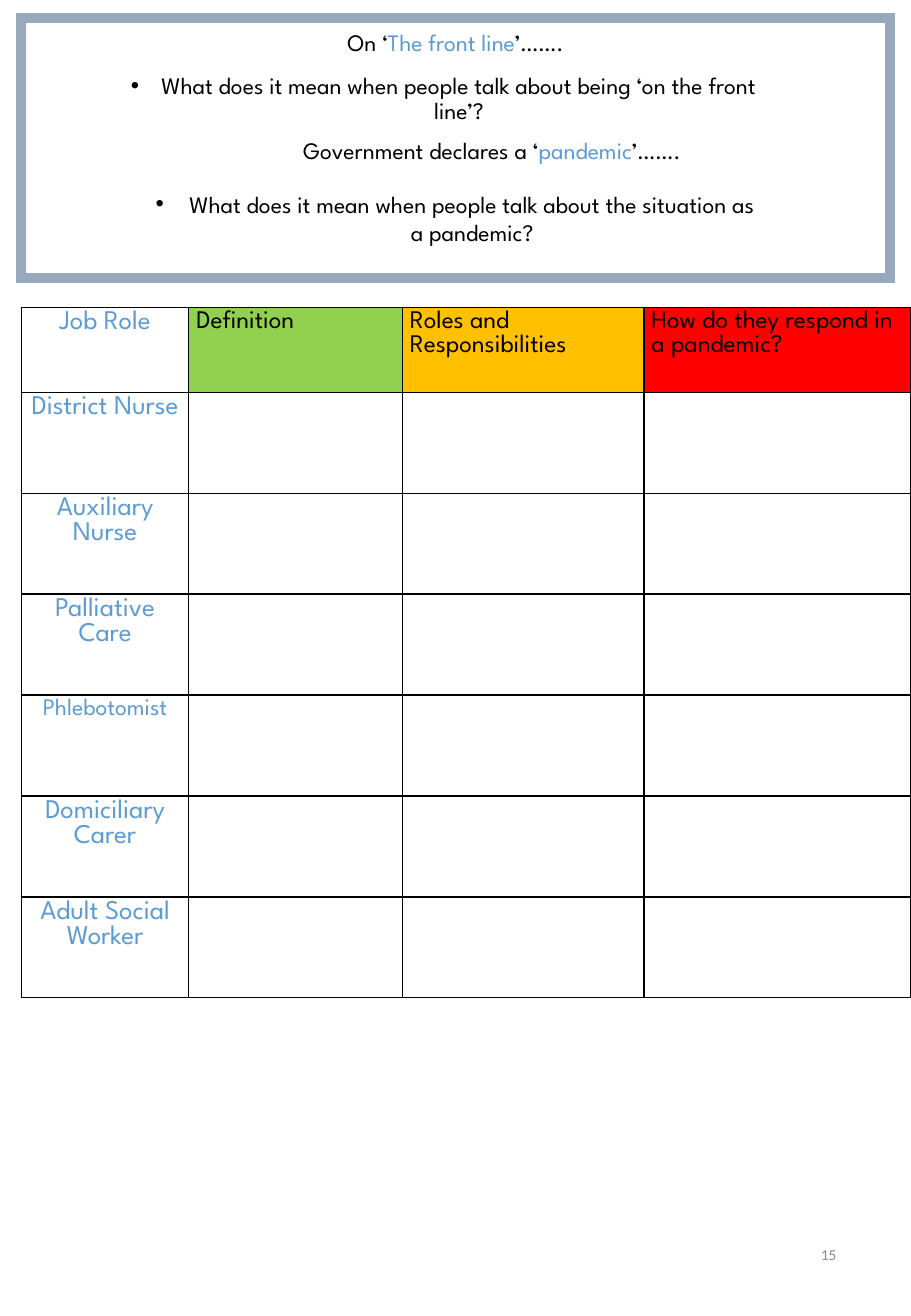
"""Build the worksheet page on front-line job roles in a pandemic."""
from pptx import Presentation
from pptx.dml.color import RGBColor
from pptx.enum.shapes import MSO_SHAPE
from pptx.enum.text import MSO_ANCHOR, MSO_AUTO_SIZE, PP_ALIGN
from pptx.oxml.ns import qn
from pptx.util import Pt
from lxml import etree

LEFT, CENTER, RIGHT = PP_ALIGN.LEFT, PP_ALIGN.CENTER, PP_ALIGN.RIGHT
TOP, MIDDLE = MSO_ANCHOR.TOP, MSO_ANCHOR.MIDDLE
RECTANGLE, NO_FIT = MSO_SHAPE.RECTANGLE, MSO_AUTO_SIZE.NONE
FONT, BLACK, BLUE, GREY, FRAME = "League Spartan", "000000", "5B9BD5", "888888", "98A8BD"

TITLE = [("On ‘", BLACK), ("The front line", BLUE), ("’…….", BLACK)]
TITLE_AREA = (186.2, 13, 167.8, 24.5)
PANDEMIC = [("Government declares a ‘", BLACK), ("pandemic", BLUE), ("’…….", BLACK)]
FRONT_QUESTION = "What does it mean when people talk about being ‘on the front line’?"
PANDEMIC_QUESTION = "What does it mean when people talk about the situation as a pandemic?"
TEXTS = [
    ((60.8, 40.3, 404.6, 73.4), [(FRONT_QUESTION, BLACK)], {"line_spacing": 0.9}, 18),
    ((143.3, 77, 296.6, 24.5), PANDEMIC, {}, 0),
    ((84.5, 108.7, 370.8, 41), [(PANDEMIC_QUESTION, BLACK)], {}, 20),
]
PAGE_NUMBER = ("15", (381.2, 722.6, 121.7, 41.8))
FRAME_AREA = (12.7, 10.8, 514.8, 154.1)

HEADINGS = [
    ("Job Role", None),
    ("Definition", "92D050"),
    ("Roles and Responsibilities", "FFC000"),
    ("How do they respond in a pandemic?", "FF0000"),
]
ROLES = [
    ("District Nurse", 16), ("Auxiliary Nurse", 16), ("Palliative Care", 16),
    ("Phlebotomist", 14), ("Domiciliary Carer", 16), ("Adult Social Worker", 16),
]
TABLE_LEFT, TABLE_TOP = 12.7, 182.1
COLUMN_WIDTHS = [99.2, 126.6, 143.2, 157.9]
HEADING_HEIGHT, ROLE_HEIGHT = 50.4, 59.8


def color(value):
    return RGBColor.from_string(value)


def points(area):
    return [Pt(length) for length in area]


def apply(target, formats):
    for name, value in formats.items():
        setattr(target, name, value)


def write(para, spans, size, align, font=FONT):
    para.alignment = align
    for words, shade in spans:
        span = para.add_run()
        span.text = words
        apply(span.font, {"name": font, "size": Pt(size), "bold": False})
        span.font.color.rgb = color(shade)


def add_bullet(para, indent):
    properties = para._p.get_or_add_pPr()
    properties.set("marL", str(Pt(indent)))
    properties.set("indent", str(-Pt(indent)))
    etree.SubElement(properties, qn("a:buFont"), typeface="Arial")
    etree.SubElement(properties, qn("a:buChar"), char="•")


def prepare(frame, anchor=TOP):
    apply(frame, {
        "word_wrap": True, "auto_size": NO_FIT, "vertical_anchor": anchor,
        "margin_left": Pt(7.2), "margin_right": Pt(7.2),
        "margin_top": Pt(3.6), "margin_bottom": Pt(3.6),
    })
    return frame.paragraphs[0]


def outline(cell):
    properties = cell._tc.get_or_add_tcPr()
    for side in ("a:lnL", "a:lnR", "a:lnT", "a:lnB"):
        line = etree.SubElement(properties, qn(side), w=str(Pt(1)))
        fill = etree.SubElement(line, qn("a:solidFill"))
        etree.SubElement(fill, qn("a:srgbClr"), val=BLACK)


def fill_cell(cell, words, size, shade, align, background):
    apply(cell, {
        "margin_left": Pt(4.5), "margin_right": Pt(4.5),
        "margin_top": Pt(2.2), "margin_bottom": Pt(2.2),
    })
    outline(cell)
    if background:
        cell.fill.solid()
        cell.fill.fore_color.rgb = color(background)
    else:
        cell.fill.background()
    if words:
        write(cell.text_frame.paragraphs[0], [(words, shade)], size, align)


def add_roles_table(page):
    heights = [HEADING_HEIGHT] + [ROLE_HEIGHT] * len(ROLES)
    area = (TABLE_LEFT, TABLE_TOP, sum(COLUMN_WIDTHS), sum(heights))
    table = page.shapes.add_table(len(heights), len(COLUMN_WIDTHS), *points(area)).table
    for column, width in zip(table.columns, COLUMN_WIDTHS):
        column.width = Pt(width)
    for row, height in zip(table.rows, heights):
        row.height = Pt(height)
    for index, (words, background) in enumerate(HEADINGS):
        style = (15, BLACK, LEFT) if index else (16, BLUE, CENTER)
        fill_cell(table.cell(0, index), words, *style, background)
    for number, (role, size) in enumerate(ROLES, start=1):
        for index in range(len(HEADINGS)):
            fill_cell(table.cell(number, index), "" if index else role, size, BLUE, CENTER, None)


def add_frame(page):
    frame = page.shapes.add_shape(RECTANGLE, *points(FRAME_AREA))
    frame.shadow.inherit = False
    frame.fill.background()
    frame.line.color.rgb = color(FRAME)
    frame.line.width = Pt(6)
    etree.SubElement(frame.line._get_or_add_ln(), qn("a:miter"), lim="800000")


def main():
    deck = Presentation()
    apply(deck, {"slide_width": Pt(540), "slide_height": Pt(779.76)})
    page = deck.slides.add_slide(deck.slide_layouts[5])
    add_roles_table(page)

    title = page.shapes.title
    apply(title, dict(zip(("left", "top", "width", "height"), points(TITLE_AREA))))
    write(prepare(title.text_frame), TITLE, 14, CENTER)

    for area, spans, formats, indent in TEXTS:
        para = prepare(page.shapes.add_textbox(*points(area)).text_frame)
        write(para, spans, 14, CENTER)
        apply(para, formats)
        if indent:
            add_bullet(para, indent)

    add_frame(page)
    number, area = PAGE_NUMBER
    box = page.shapes.add_textbox(*points(area))
    write(prepare(box.text_frame, MIDDLE), [(number, GREY)], 9, RIGHT, "Calibri")
    deck.save("out.pptx")


if __name__ == "__main__":
    main()
